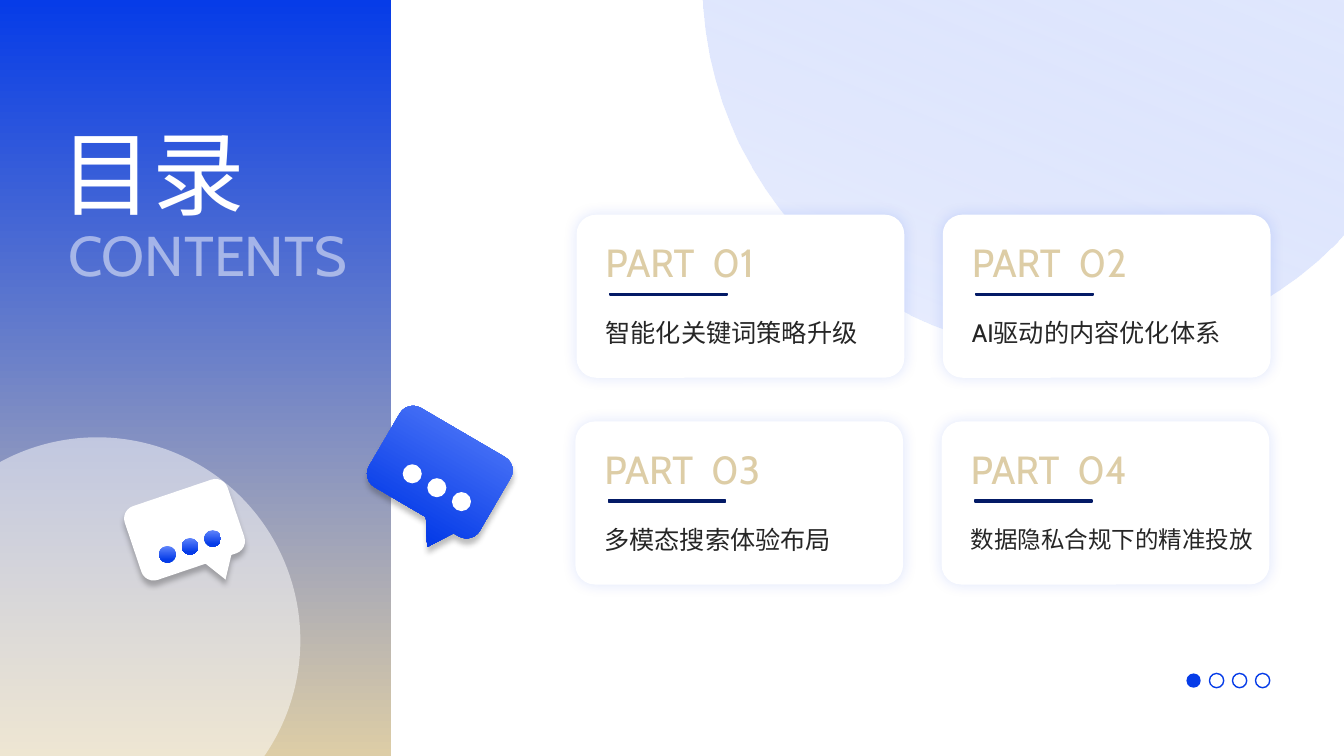
"""Build the contents slide with four part cards."""
from lxml.etree import SubElement
from pptx import Presentation
from pptx.dml.color import RGBColor
from pptx.enum.shapes import MSO_SHAPE as Kind
from pptx.enum.text import MSO_ANCHOR as Anchor
from pptx.oxml.ns import qn
from pptx.util import Cm, Pt

WHITE = RGBColor(0xFF, 0xFF, 0xFF)
BLUE = RGBColor(0x06, 0x3C, 0xE8)
SKY = RGBColor(0x60, 0x85, 0xFB)
PALE = RGBColor(0x95, 0xAE, 0xFC)
NAVY = RGBColor(0x03, 0x1A, 0x66)
SAND = RGBColor(0xDD, 0xCD, 0xA6)
DARK = RGBColor(0x26, 0x26, 0x26)

deck = Presentation()
deck.slide_width, deck.slide_height = Cm(33.87), Cm(19.05)
slide = deck.slides.add_slide(deck.slide_layouts[6])


def draw(kind, box, fill=None, line=None, angle=270, end=1, shadow=None):
    """Add a shape; a list of two colours makes a gradient."""
    shape = slide.shapes.add_shape(kind, *map(Cm, box))
    if isinstance(fill, list):
        shape.fill.gradient()
        shape.fill.gradient_angle = angle
        for stop, color, place in zip(shape.fill.gradient_stops, fill, (0, end)):
            stop.color.rgb = color
            stop.position = place
    elif fill is None:
        shape.fill.background()
    else:
        shape.fill.solid()
        shape.fill.fore_color.rgb = fill
    if line is None:
        shape.line.fill.background()
    else:
        shape.line.color.rgb = line
        shape.line.width = Pt(1)
    shape.shadow.inherit = False
    if shadow:
        color, alpha, blur, dist = shadow
        effects = shape._element.spPr.find(qn("a:effectLst"))
        outer = SubElement(effects, qn("a:outerShdw"), blurRad=str(Pt(blur)),
                           dist=str(Pt(dist)), dir="5400000", algn="ctr",
                           rotWithShape="0")
        tint = SubElement(outer, qn("a:srgbClr"), val=str(color))
        SubElement(tint, qn("a:alpha"), val=str(alpha * 1000))
    return shape


def write(text, box, size, color, anchor=Anchor.MIDDLE, space=1.1):
    """Add a one-paragraph text box."""
    shape = slide.shapes.add_textbox(*map(Cm, box))
    frame = shape.text_frame
    frame.word_wrap = True
    frame.vertical_anchor = anchor
    para = frame.paragraphs[0]
    para.text = text
    para.line_spacing = space
    para.font.size = Pt(size)
    para.font.name = "Cabin"
    para.font.color.rgb = color
    return shape


draw(Kind.RECTANGLE, (0, 0, 33.87, 19.05), WHITE)
disc = draw(Kind.OVAL, (17.7, -9.8, 18.67, 18.67), [WHITE, PALE], angle=90)
disc.rotation = 202.3
draw(Kind.RECTANGLE, (0, 0, 9.86, 19.05), [BLUE, SAND])
moon = draw(Kind.FLOWCHART_CONNECTOR, (-2.67, 11.02, 10.24, 10.24), WHITE)
head = write("CONTENTS", (1.47, 5.16, 8.26, 2.21), 40, WHITE, Anchor.BOTTOM, 1.3)
write("目录", (1.27, 3.02, 6.12, 2.82), 66, WHITE, Anchor.BOTTOM)

for shape, alpha in ((disc, 20), (moon, 50), (head, 50)):
    tint = shape._element.findall(".//" + qn("a:srgbClr"))[-1]
    SubElement(tint, qn("a:alpha"), val=str(alpha * 1000))

glow = [SKY, BLUE]
bubbles = (
    ((9.47, 10.74, 3.23, 2.31), 30.3, glow, WHITE, (11.01, 12.29), (0.62, 0.35), 0.48),
    ((3.28, 12.37, 2.74, 1.96), 341.3, WHITE, glow, (4.79, 13.77), (0.57, -0.2), 0.42),
)
for box, turn, fill, ink, (mid, level), (dx, dy), size in bubbles:
    bubble = draw(Kind.ROUNDED_RECTANGULAR_CALLOUT, box, fill, end=0.82,
                  shadow=(DARK, 30, 4, 4))
    bubble.rotation = turn
    bubble._element.spPr.find(qn("a:xfrm")).set("flipH", "1")
    for i, value in enumerate((-0.21, 0.775, 0.167)):
        bubble.adjustments[i] = value
    for i in (-1, 0, 1):
        spot = (mid + i * dx - size / 2, level + i * dy - size / 2, size, size)
        draw(Kind.OVAL, spot, ink, end=0.82)

parts = (
    ("智能化关键词策略升级", 18),
    ("AI驱动的内容优化体系", 18),
    ("多模态搜索体验布局", 18),
    ("数据隐私合规下的精准投放", 16.8),
)
for i, (title, size) in enumerate(parts):
    row, col = divmod(i, 2)
    x, y = 14.53 + 9.23 * col - 0.03 * row, 5.41 + 5.21 * row
    card = draw(Kind.ROUNDED_RECTANGLE, (x, y, 8.26, 4.11), WHITE,
                shadow=(BLUE, 12, 10, 0))
    card.adjustments[0] = 0.12
    write(f"PART  {i + 1:02}", (x + 0.48, y + 0.48, 7.62, 1.32), 28, SAND)
    draw(Kind.RECTANGLE, (x + 0.84, y + 1.98, 2.95, 0.05), DARK, NAVY)
    write(title, (x + 0.48, y + 2.39, 7.62, 1.07), size, DARK)

for i in range(4):
    draw(Kind.FLOWCHART_CONNECTOR, (29.9 + 0.58 * i, 16.97, 0.36, 0.36),
         None if i else BLUE, BLUE if i else None)

deck.save("out.pptx")
